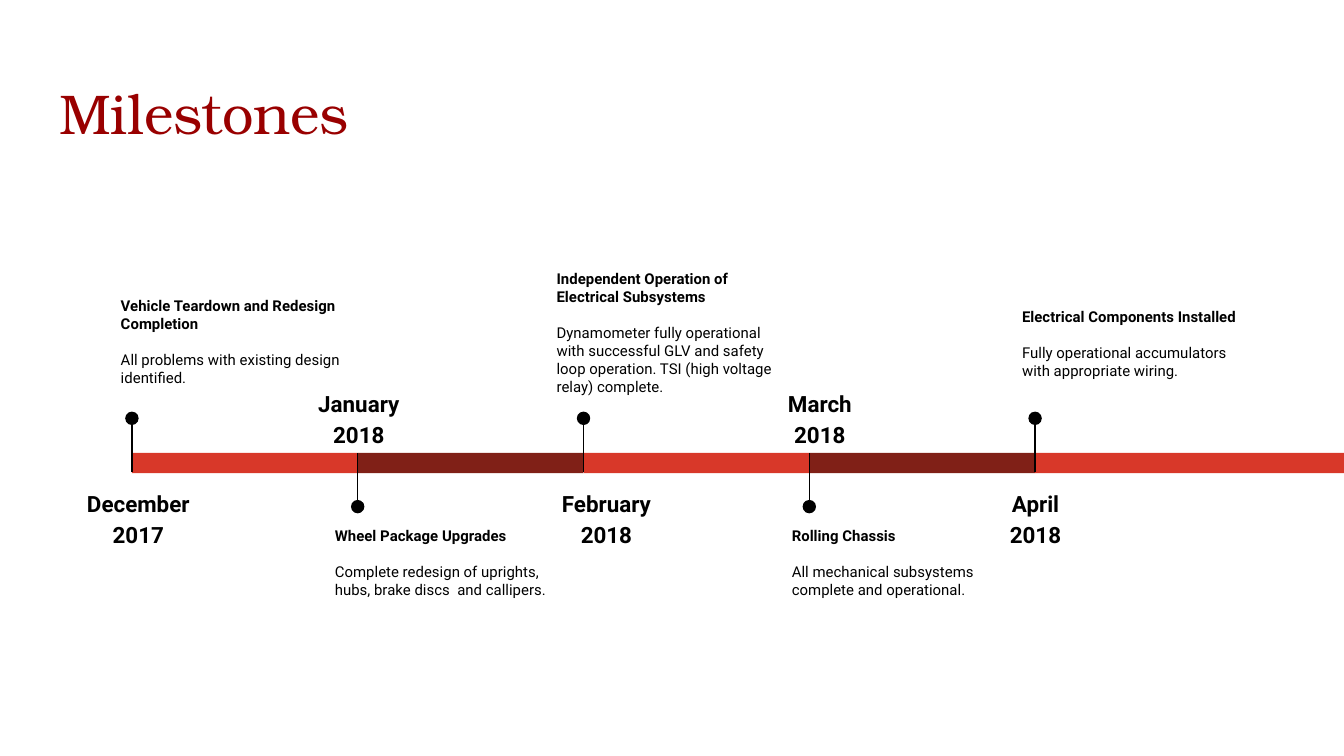
"""Build a milestone timeline on a 16:9 slide that is 100 grid columns wide."""
from lxml import etree
from pptx import Presentation
from pptx import util as u
from pptx.dml.color import RGBColor
from pptx.enum import shapes, text
from pptx.oxml.ns import qn

THEME = {
    "title": RGBColor.from_string("990000"),
    "ink": RGBColor.from_string("000000"),
    "bars": [RGBColor.from_string("D83829"), RGBColor.from_string("802017")],
    "title_font": "TeX Gyre Bonum",
    "font": "Roboto",
    "title_size": 30,
    "date_size": 12,
    "note_size": 8,
}
COLUMNS = 100
FIRST, STEP = 9.82, 16.8
BAR_TOP, BAR_HEIGHT = 33.7, 1.5
DOT = 1

# date, date left, date width, note left, note top, heading, detail
MILESTONES = [
    ("December 2017", 5.1, 10.4, 8, 21.1, "Vehicle Teardown and Redesign Completion",
     "All problems with existing design identified."),
    ("January 2018", 22.6, 8.2, 23.93, 38.2, "Wheel Package Upgrades",
     "Complete redesign of uprights, hubs, brake discs  and callipers."),
    ("February 2018", 39.83, 10.6, 40.43, 19.1, "Independent Operation of Electrical Subsystems",
     "Dynamometer fully operational with successful GLV and safety loop operation. "
     "TSI (high voltage relay) complete."),
    ("March 2018", 56.9, 8.2, 57.93, 38.2, "Rolling Chassis",
     "All mechanical subsystems complete and operational."),
    ("April 2018", 72.95, 8.2, 75.06, 21.9, "Electrical Components Installed",
     "Fully operational accumulators with appropriate wiring."),
]

deck = Presentation()
deck.slide_width = u.Inches(10)
deck.slide_height = u.Emu(deck.slide_width * 9 // 16)
page = deck.slides.add_slide(deck.slide_layouts[6])
cell = deck.slide_width / COLUMNS


def grid(*cells):
    """Turn grid cells into slide lengths."""
    return [u.Emu(round(count * cell)) for count in cells]


def write(area, lines, size, font, color):
    """Add a text box with one paragraph for each (words, bold) line."""
    frame = page.shapes.add_textbox(*grid(*area)).text_frame
    frame.word_wrap = True
    frame.vertical_anchor = text.MSO_ANCHOR.TOP
    frame.margin_left = frame.margin_right = u.Inches(0.1)
    frame.margin_top = frame.margin_bottom = u.Inches(0.1)
    frame.text = "\n".join(words for words, bold in lines)
    for para, (words, bold) in zip(frame.paragraphs, lines):
        for span in para.runs:
            span.font.size = u.Pt(size)
            span.font.name = font
            span.font.bold = bold
            span.font.color.rgb = color
    return frame.paragraphs


write((3.42, 4.86, 93.2, 6.3), [("Milestones", False)],
      THEME["title_size"], THEME["title_font"], THEME["title"])

for index, (date, date_left, date_width, note_left, note_top, heading, detail) in enumerate(MILESTONES):
    above = index % 2 == 0
    left = FIRST + index * STEP
    right = COLUMNS if index == len(MILESTONES) - 1 else left + STEP
    stem_top, stem_end = (31.2, 35.1) if above else (37.6, BAR_TOP)
    dot_top = 30.63 if above else 37.2

    bar = page.shapes.add_shape(shapes.MSO_SHAPE.RECTANGLE,
                                *grid(left, BAR_TOP, right - left, BAR_HEIGHT))
    stem = page.shapes.add_connector(shapes.MSO_CONNECTOR.STRAIGHT,
                                     *grid(left, stem_top, left, stem_end))
    stem.line.color.rgb = THEME["ink"]
    stem.line.width = u.Pt(0.75)
    etree.SubElement(stem._element.spPr, qn("a:effectLst"))
    dot = page.shapes.add_shape(shapes.MSO_SHAPE.OVAL,
                                *grid(left - DOT / 2, dot_top, DOT, DOT))
    for shape, color in ((bar, THEME["bars"][index % 2]), (dot, THEME["ink"])):
        shape.shadow.inherit = False
        shape.fill.solid()
        shape.fill.fore_color.rgb = color
        shape.line.fill.background()

    date_top = 35.2 if above else 27.74
    date_para = write((date_left, date_top, date_width, 4.1), [(date, True)],
                      THEME["date_size"], THEME["font"], THEME["ink"])[0]
    date_para.alignment = text.PP_ALIGN.CENTER
    date_para.line_spacing = 1.15

    heading_para = write((note_left, note_top, 19.5, 10.3), [(heading, True), (detail, False)],
                         THEME["note_size"], THEME["font"], THEME["ink"])[0]
    heading_para.space_after = u.Pt(9.6)

deck.save("out.pptx")
